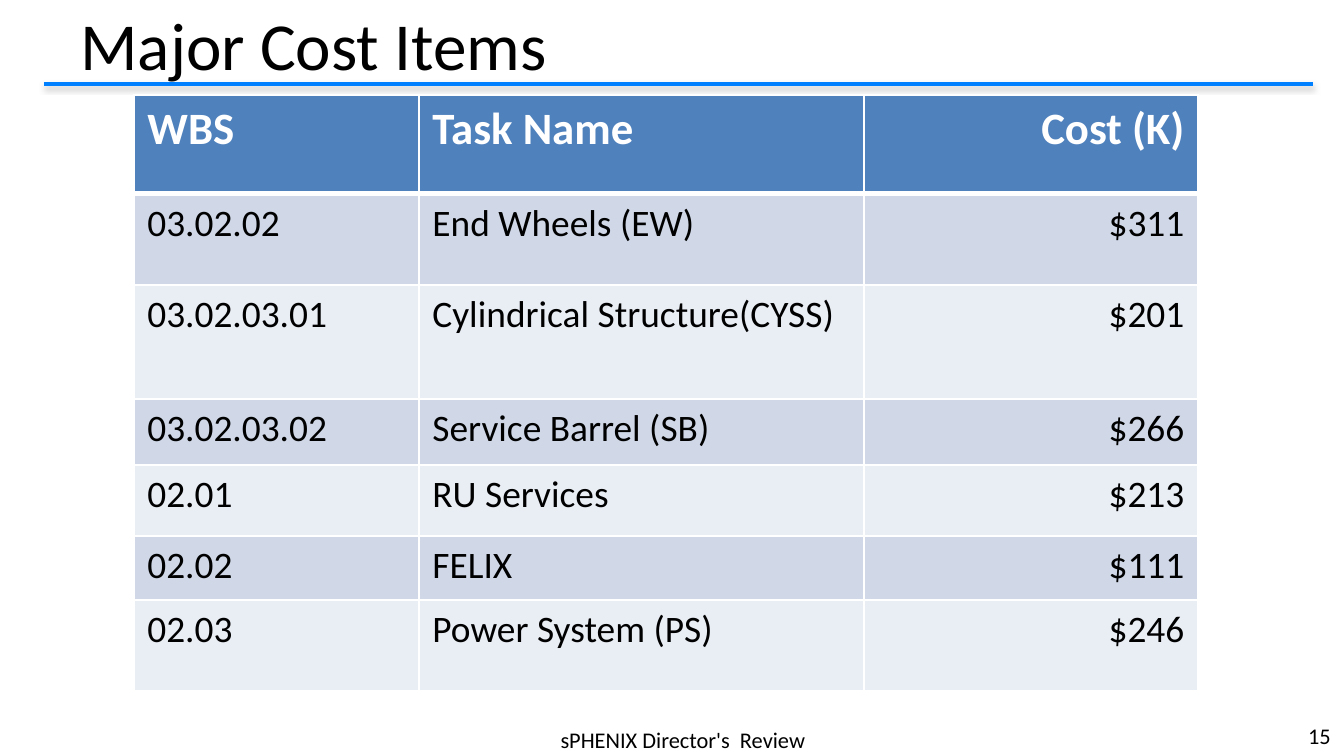
from lxml.etree import SubElement
from pptx import Presentation
from pptx.dml.color import RGBColor
from pptx.enum.shapes import MSO_CONNECTOR
from pptx.enum.text import MSO_ANCHOR as Anchor, MSO_AUTO_SIZE as AutoSize, PP_ALIGN as Align
from pptx.oxml import parse_xml
from pptx.oxml.ns import nsdecls, qn
from pptx.util import Pt

PX = 914400 / 134.4
COLORS = {
    "black": "000000",
    "white": "FFFFFF",
    "rule": "0080FF",
    "shadow": "808080",
    "header": "4F81BD",
    "odd": "D0D8E8",
    "even": "E9EDF4",
}


def px(*lengths):
    """Turn pixel lengths into EMU."""
    return [round(length * PX) for length in lengths]


def write(frame, text, size, color="black", bold=False, align=Align.LEFT, anchor=Anchor.MIDDLE):
    frame.word_wrap = True
    frame.auto_size = AutoSize.NONE
    frame.vertical_anchor = anchor
    paragraph = frame.paragraphs[0]
    paragraph.alignment = align
    run = paragraph.add_run()
    run.text = text
    run.font.name = "Calibri"
    run.font.size = Pt(size)
    run.font.bold = bold
    run.font.color.rgb = RGBColor.from_string(COLORS[color])


presentation = Presentation()
presentation.slide_width, presentation.slide_height = px(1344, 756)
slide = presentation.slides.add_slide(presentation.slide_layouts[5])

# Rule under the title, with a soft shadow below it
rule = slide.shapes.add_connector(MSO_CONNECTOR.STRAIGHT, *px(44, 84, 1313, 84))
rule.line.color.rgb = RGBColor.from_string(COLORS["rule"])
rule.line.width = Pt(2.25)
rule.element.spPr.append(parse_xml(
    f'<a:effectLst {nsdecls("a")}>'
    f'<a:outerShdw blurRad="{Pt(3.1)}" dist="{Pt(1.6)}" dir="5400000" rotWithShape="0">'
    f'<a:srgbClr val="{COLORS["shadow"]}"><a:alpha val="38000"/></a:srgbClr>'
    '</a:outerShdw></a:effectLst>'))

title = slide.shapes.title
title.left, title.top, title.width, title.height = px(67, -3, 1210, 94)
write(title.text_frame, "Major Cost Items", 36)

# Cost table
rows = [
    ("WBS", "Task Name", "Cost (K)"),
    ("03.02.02", "End Wheels (EW)", "$311"),
    ("03.02.03.01", "Cylindrical Structure(CYSS)", "$201"),
    ("03.02.03.02", "Service Barrel (SB)", "$266"),
    ("02.01", "RU Services", "$213"),
    ("02.02", "FELIX", "$111"),
    ("02.03", "Power System (PS)", "$246"),
]
column_widths = [285, 445, 334]
row_heights = [99, 91, 114, 66, 71, 64, 91]
table = slide.shapes.add_table(
    len(rows), len(column_widths),
    *px(134, 95, sum(column_widths), sum(row_heights))).table
for column, width in zip(table.columns, px(*column_widths)):
    column.width = width
for row, height in zip(table.rows, px(*row_heights)):
    row.height = height

for row_index, texts in enumerate(rows):
    is_header = row_index == 0
    fill = "header" if is_header else "odd" if row_index % 2 else "even"
    for column_index, text in enumerate(texts):
        cell = table.cell(row_index, column_index)
        properties = cell._tc.get_or_add_tcPr()
        for side in "LRTB":
            thick = (is_header and side == "B") or (row_index == 1 and side == "T")
            border = SubElement(properties, qn(f"a:ln{side}"), w=str(Pt(3 if thick else 1)))
            border_fill = SubElement(border, qn("a:solidFill"))
            SubElement(border_fill, qn("a:srgbClr"), val=COLORS["white"])
        cell.fill.solid()
        cell.fill.fore_color.rgb = RGBColor.from_string(COLORS[fill])
        write(cell.text_frame, text, 24 if is_header else 20,
              color="white" if is_header else "black", bold=is_header,
              align=Align.RIGHT if column_index == 2 else Align.LEFT, anchor=Anchor.TOP)

# Footer and page number
for text, box, align in [
    ("sPHENIX Director's  Review", (470, 724, 426, 32), Align.CENTER),
    ("15", (1266, 716, 78, 40), Align.RIGHT),
]:
    footer = slide.shapes.add_textbox(*px(*box))
    write(footer.text_frame, text, 12, align=align)

presentation.save("out.pptx")
